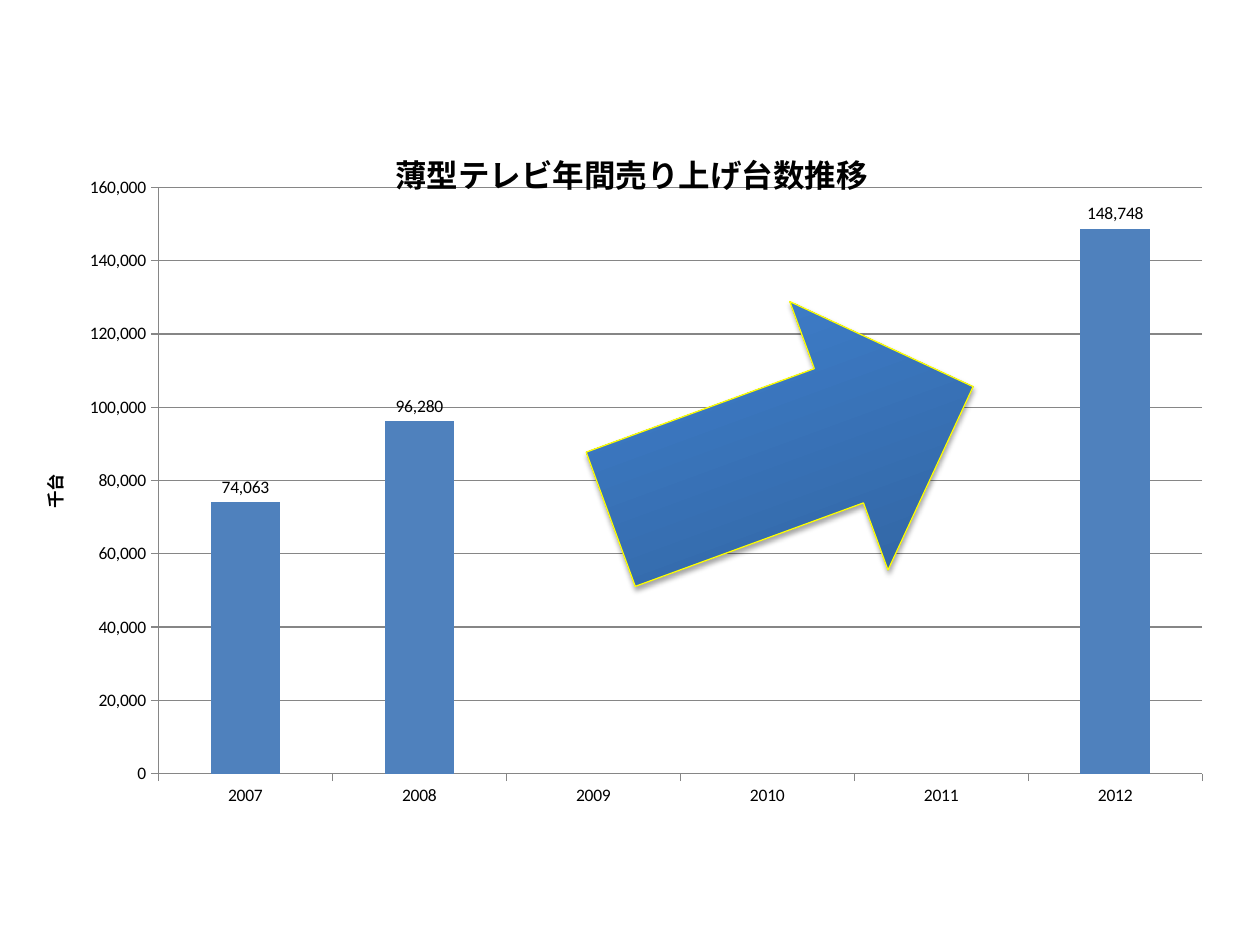
from copy import deepcopy
from dataclasses import dataclass

from lxml.etree import SubElement
from pptx import Presentation
from pptx.chart.data import CategoryChartData
from pptx.dml.color import RGBColor
from pptx.enum.chart import XL_CHART_TYPE, XL_LABEL_POSITION, XL_TICK_MARK
from pptx.enum.shapes import MSO_SHAPE
from pptx.oxml.ns import qn
from pptx.util import Inches, Pt

PIXELS_PER_INCH = 126


def px(length):
    return round(Inches(1) * length / PIXELS_PER_INCH)


@dataclass(frozen=True)
class Theme:
    font: str = "Calibri"
    text: str = "000000"
    bar: str = "4F81BD"
    grid: str = "868686"
    arrow_line: str = "FFFF00"
    arrow_stops: tuple = ((0, "2F5F99"), (0.8, "3D7CC7"), (1, "3A7CCB"))
    title_size: int = 18
    label_size: int = 10


class SlideBuilder:
    def __init__(self, deck, theme):
        self.theme = theme
        self.slide = deck.slides.add_slide(deck.slide_layouts[6])

    def style_font(self, font, size, bold=False):
        font.name = self.theme.font
        font.size = Pt(size)
        font.bold = bold
        font.color.rgb = RGBColor.from_string(self.theme.text)

    def write_title(self, title, text, size, x, y):
        span = title.text_frame.paragraphs[0].add_run()
        span.text = text
        self.style_font(span.font, size, bold=True)
        self.place(title._element, 1, xMode="edge", yMode="edge", x=x, y=y)

    def place(self, parent, index, **settings):
        for old in parent.findall(qn("c:layout")):
            parent.remove(old)
        layout = SubElement(parent, qn("c:layout"))
        manual = SubElement(layout, qn("c:manualLayout"))
        for name, value in settings.items():
            SubElement(manual, qn(f"c:{name}")).set("val", str(value))
        parent.insert(index, layout)

    def column_chart(self, left, top, width, height, title, unit, sales):
        data = CategoryChartData(number_format="#,##0")
        data.categories = list(sales)
        data.add_series("Series 1", list(sales.values()))
        chart = self.slide.shapes.add_chart(
            XL_CHART_TYPE.COLUMN_CLUSTERED,
            px(left), px(top), px(width), px(height), data,
        ).chart
        self.style_font(chart.font, self.theme.label_size)
        chart.has_legend = False
        chart.has_title = True
        self.write_title(chart.chart_title, title, self.theme.title_size, 0.3, 0.04)
        self.place(
            chart._chartSpace.chart.plotArea, 0, layoutTarget="inner",
            xMode="edge", yMode="edge", x=0.106, y=0.104, w=0.875, h=0.819,
        )

        plot = chart.plots[0]
        plot.gap_width = 150
        plot.vary_by_categories = False
        plot.has_data_labels = True
        labels = plot.data_labels
        labels.show_value = True
        labels.number_format = "#,##0"
        labels.number_format_is_linked = False
        labels.position = XL_LABEL_POSITION.OUTSIDE_END
        self.style_font(labels.font, self.theme.label_size)
        fill = plot.series[0].format.fill
        fill.solid()
        fill.fore_color.rgb = RGBColor.from_string(self.theme.bar)
        self.style_axes(chart, unit)

    def style_axes(self, chart, unit):
        values = chart.value_axis
        values.minimum_scale = 0
        values.maximum_scale = 160000
        values.major_unit = 20000
        values.has_major_gridlines = True
        values.tick_labels.number_format = "#,##0"
        values.tick_labels.number_format_is_linked = False
        values.has_title = True
        self.write_title(values.axis_title, unit, self.theme.label_size, 0.005, 0.5)
        for axis in (chart.category_axis, values):
            axis.major_tick_mark = XL_TICK_MARK.OUTSIDE
            axis.minor_tick_mark = XL_TICK_MARK.NONE
            self.style_font(axis.tick_labels.font, self.theme.label_size)
            self.style_line(axis.format.line)
        self.style_line(values.major_gridlines.format.line)

    def style_line(self, line):
        line.color.rgb = RGBColor.from_string(self.theme.grid)
        line.width = Pt(0.75)

    def arrow(self, left, top, width, height, rotation):
        shape = self.slide.shapes.add_shape(
            MSO_SHAPE.RIGHT_ARROW, px(left), px(top), px(width), px(height)
        )
        shape.rotation = rotation
        shape.line.color.rgb = RGBColor.from_string(self.theme.arrow_line)
        shape.line.width = Pt(0.75)
        shape.fill.gradient()
        shape.fill.gradient_angle = 90
        properties = shape._element.spPr
        stop_list = properties.find(".//" + qn("a:gsLst"))
        stop_list.append(deepcopy(stop_list[0]))
        for stop, (position, color) in zip(
            shape.fill.gradient_stops, self.theme.arrow_stops
        ):
            stop.position = position
            stop.color.rgb = RGBColor.from_string(color)
        self.add_shadow(shape)

    def add_shadow(self, shape):
        shape.shadow.inherit = False
        effects = shape._element.spPr.find(qn("a:effectLst"))
        shadow = SubElement(
            effects, qn("a:outerShdw"), blurRad=str(Pt(3.1)),
            dist=str(Pt(1.8)), dir="5400000", rotWithShape="0",
        )
        color = SubElement(shadow, qn("a:srgbClr"), val=self.theme.text)
        SubElement(color, qn("a:alpha"), val="35000")


def main():
    deck = Presentation()
    deck.slide_width = px(1260)
    deck.slide_height = px(945)
    page = SlideBuilder(deck, Theme())
    sales = {
        "2007": 74063, "2008": 96280, "2009": None,
        "2010": None, "2011": None, "2012": 148748,
    }
    page.column_chart(
        32, 113, 1193, 716, "薄型テレビ年間売り上げ台数推移", "千台", sales
    )
    page.arrow(599, 310, 386, 286, 339.9)
    deck.save("out.pptx")


if __name__ == "__main__":
    main()
